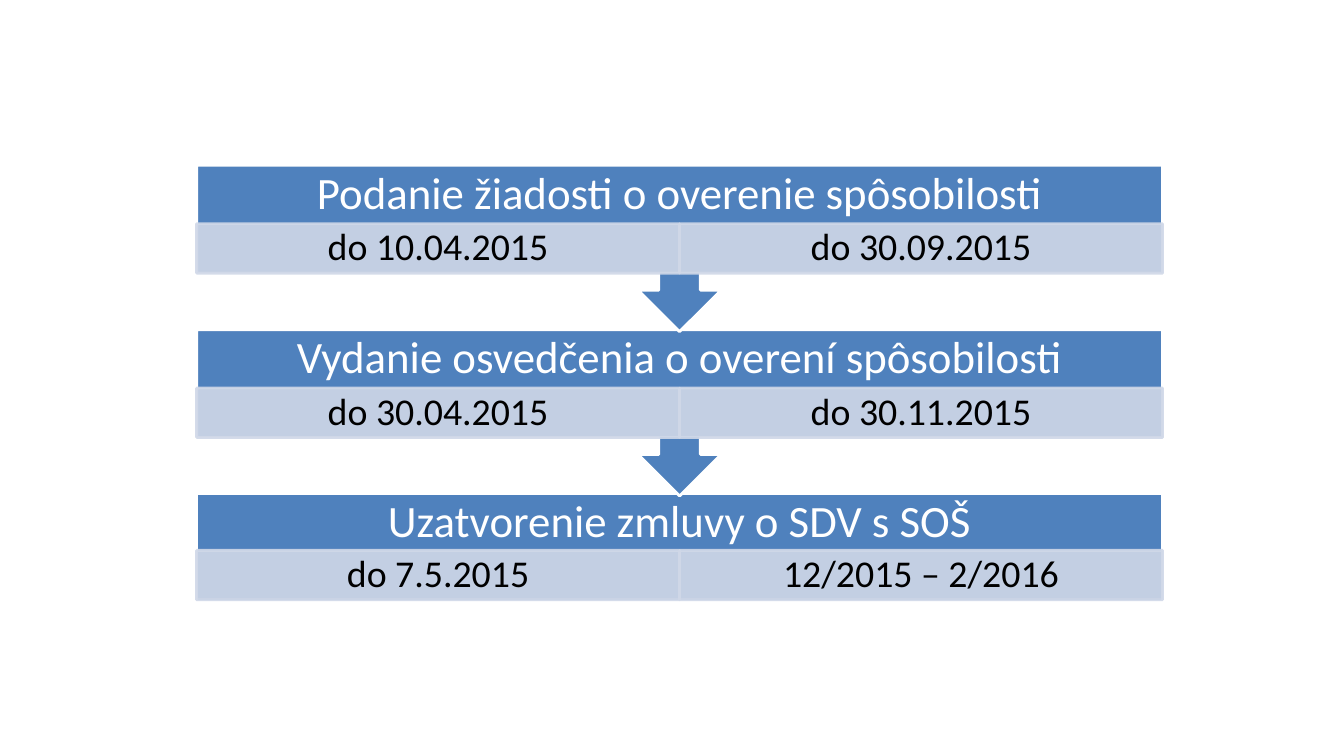
"""Build a slide with three process steps and the two deadlines of each."""
from lxml import etree
from pptx import Presentation
from pptx.dml.color import RGBColor
from pptx.enum.shapes import MSO_SHAPE
from pptx.enum.text import MSO_ANCHOR, PP_ALIGN
from pptx.oxml.ns import qn
from pptx.util import Inches, Pt

RECTANGLE = MSO_SHAPE.RECTANGLE
ARROW_CALLOUT = MSO_SHAPE.UP_ARROW_CALLOUT
MIDDLE = MSO_ANCHOR.MIDDLE
CENTER = PP_ALIGN.CENTER

BLUE = RGBColor(0x4F, 0x81, 0xBD)
PALE_BLUE = RGBColor(0xD0, 0xD8, 0xE8)
WHITE = RGBColor(0xFF, 0xFF, 0xFF)
BLACK = RGBColor(0x00, 0x00, 0x00)

FONT = "Calibri"
LEFT, WIDTH = 1.95, 9.58
TITLE_HEIGHT, DATE_HEIGHT = 0.58, 0.49
CALLOUT_HEIGHT, LAST_HEIGHT = 1.65, 1.07

STEPS = [
    (1.64, 2.22, "Podanie žiadosti o overenie spôsobilosti",
     ("do 10.04.2015", "do 30.09.2015")),
    (3.27, 3.85, "Vydanie osvedčenia o overení spôsobilosti",
     ("do 30.04.2015", "do 30.11.2015")),
    (4.9, 5.46, "Uzatvorenie zmluvy o SDV s SOŠ",
     ("do 7.5.2015", "12/2015 – 2/2016")),
]


def set_opacity(color_format_owner, percent):
    """Make the solid colour of a fill partly transparent."""
    for color in color_format_owner.iter(qn("a:srgbClr")):
        alpha = etree.SubElement(color, qn("a:alpha"))
        alpha.set("val", str(percent * 1000))


def add_block(slide, kind, left, top, width, height, fill, line):
    """Add a filled and outlined shape without a shadow."""
    shape = slide.shapes.add_shape(
        kind, Inches(left), Inches(top), Inches(width), Inches(height))
    shape.shadow.inherit = False
    shape.fill.solid()
    shape.fill.fore_color.rgb = fill
    shape.line.color.rgb = line
    shape.line.width = Pt(2)
    return shape


def write_text(shape, text, size, color, side_inset, end_inset):
    """Write one centred line of text into a shape."""
    frame = shape.text_frame
    frame.text = text
    frame.word_wrap = True
    frame.vertical_anchor = MIDDLE
    frame.margin_left = frame.margin_right = Inches(side_inset)
    frame.margin_top = frame.margin_bottom = Inches(end_inset)
    paragraph = frame.paragraphs[0]
    paragraph.alignment = CENTER
    paragraph.line_spacing = 0.9
    font = paragraph.runs[0].font
    font.name = FONT
    font.size = Pt(size)
    font.color.rgb = color


def add_title(slide, top, text):
    """Add the heading of a step."""
    title = slide.shapes.add_textbox(
        Inches(LEFT), Inches(top), Inches(WIDTH), Inches(TITLE_HEIGHT))
    write_text(title, text, 32, WHITE, 0.25, 0.25)


def add_dates(slide, top, dates):
    """Add a row of equally wide date cells."""
    width = WIDTH / len(dates)
    for column, date in enumerate(dates):
        cell = add_block(slide, RECTANGLE, LEFT + column * width, top,
                         width, DATE_HEIGHT, PALE_BLUE, PALE_BLUE)
        set_opacity(cell.element.spPr, 90)
        write_text(cell, date, 27, BLACK, 0.21, 0.04)


def add_step(slide, step, is_last):
    """Add a step, with an arrow to the next one unless it is the last."""
    top, dates_top, title, dates = step
    kind = RECTANGLE if is_last else ARROW_CALLOUT
    height = LAST_HEIGHT if is_last else CALLOUT_HEIGHT
    block = add_block(slide, kind, LEFT, top, WIDTH, height, BLUE, WHITE)
    if not is_last:
        block.rotation = 180
    add_title(slide, top, title)
    add_dates(slide, dates_top, dates)


def main():
    """Build and save the presentation."""
    presentation = Presentation()
    presentation.slide_width = Inches(13.33)
    presentation.slide_height = Inches(7.5)
    slide = presentation.slides.add_slide(presentation.slide_layouts[6])
    for step in reversed(STEPS):
        add_step(slide, step, step is STEPS[-1])
    presentation.save("out.pptx")


if __name__ == "__main__":
    main()
